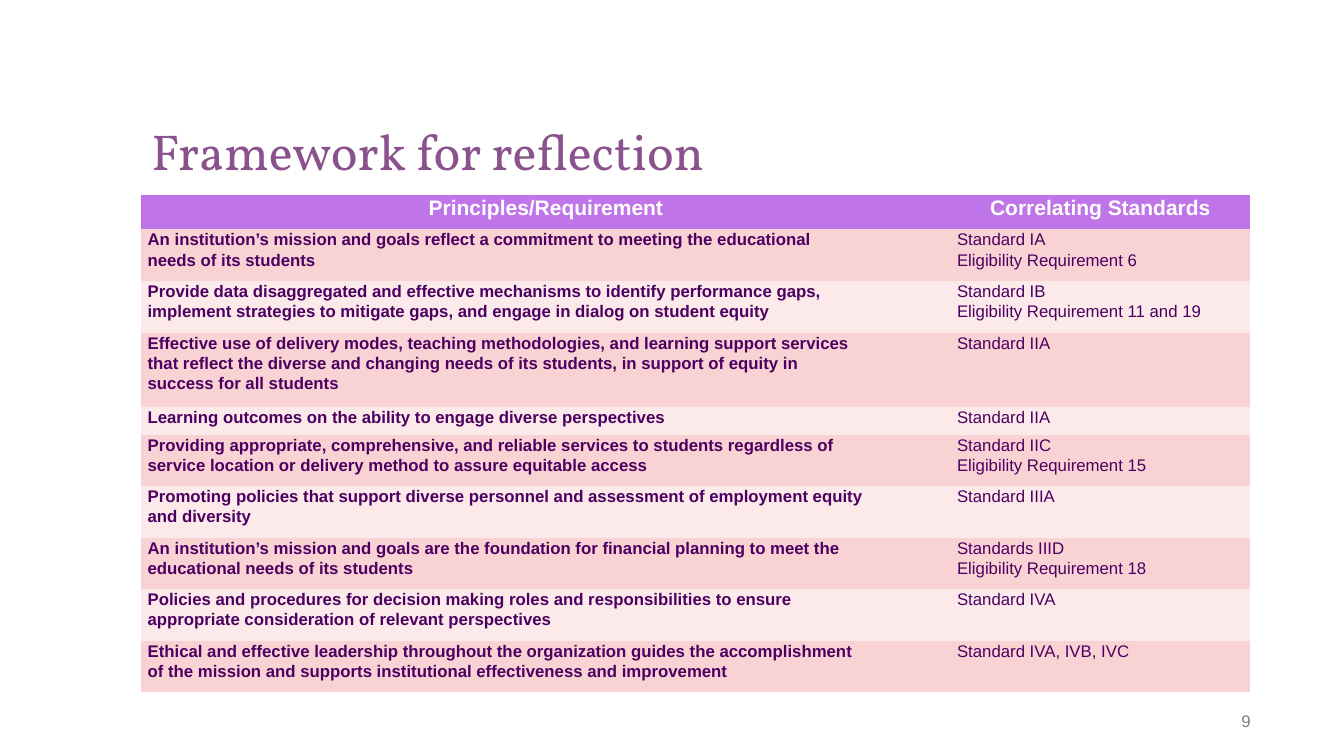
from pptx import Presentation
from pptx import util as u
from pptx.dml import color
from pptx.enum import text

WHITE, PURPLE, PLUM, MAUVE, GREY = "FFFFFF", "BF75E7", "4C0061", "8A528C", "7F7F7F"
BANDS = ["F9D2D4", "FCEAEB"]
LEFT, WIDTHS = 3.56, [20.4, 7.54]
HEADER_HEIGHT = 0.86
HEIGHT_BY_LINES = {1: 0.69, 2: 1.3, 3: 1.88}
NO_STYLE = "{2D5ABB26-0587-4C30-8999-92F81FD0307C}"

HEADINGS = ["Principles/Requirement", "Correlating Standards"]
PRINCIPLES = [
    ("An institution’s mission and goals reflect a commitment to meeting the educational\n"
     "needs of its students",
     "Standard IA\nEligibility Requirement 6"),
    ("Provide data disaggregated and effective mechanisms to identify performance gaps,\n"
     "implement strategies to mitigate gaps, and engage in dialog on student equity",
     "Standard IB\nEligibility Requirement 11 and 19"),
    ("Effective use of delivery modes, teaching methodologies, and learning support services\n"
     "that reflect the diverse and changing needs of its students, in support of equity in\n"
     "success for all students",
     "Standard IIA"),
    ("Learning outcomes on the ability to engage diverse perspectives",
     "Standard IIA"),
    ("Providing appropriate, comprehensive, and reliable services to students regardless of\n"
     "service location or delivery method to assure equitable access",
     "Standard IIC\nEligibility Requirement 15"),
    ("Promoting policies that support diverse personnel and assessment of employment equity\n"
     "and diversity",
     "Standard IIIA"),
    ("An institution’s mission and goals are the foundation for financial planning to meet the\n"
     "educational needs of its students",
     "Standards IIID\nEligibility Requirement 18"),
    ("Policies and procedures for decision making roles and responsibilities to ensure\n"
     "appropriate consideration of relevant perspectives",
     "Standard IVA"),
    ("Ethical and effective leadership throughout the organization guides the accomplishment\n"
     "of the mission and supports institutional effectiveness and improvement",
     "Standard IVA, IVB, IVC"),
]


def rgb(value):
    return color.RGBColor.from_string(value)


def write(frame, words, size, shade, font="Arial", bold=False,
          align=text.PP_ALIGN.LEFT, spacing=1.0):
    """Fill a text frame and format every run alike."""
    frame.text = words
    for para in frame.paragraphs:
        para.alignment = align
        para.line_spacing = spacing
        for span in para.runs:
            span.font.name = font
            span.font.size = u.Pt(size)
            span.font.bold = bold
            span.font.color.rgb = rgb(shade)


def add_title(page, words):
    title = page.shapes.title
    title.left, title.top = u.Cm(LEFT), u.Cm(1.02)
    title.width, title.height = u.Cm(27.91), u.Cm(3.68)
    frame = title.text_frame
    frame.auto_size = text.MSO_AUTO_SIZE.NONE
    frame.vertical_anchor = text.MSO_ANCHOR.BOTTOM
    write(frame, words, 36, MAUVE, font="Vollkorn", spacing=0.9)


def add_page_number(page, number):
    box = page.shapes.add_textbox(u.Cm(28.98), u.Cm(17.65), u.Cm(2.54), u.Cm(1.02))
    frame = box.text_frame
    frame.word_wrap = True
    frame.margin_right = 0
    frame.vertical_anchor = text.MSO_ANCHOR.MIDDLE
    write(frame, number, 12, GREY, align=text.PP_ALIGN.RIGHT)


def fill_cell(cell, words, fill, **style):
    cell.margin_left = cell.margin_right = u.Cm(0.16)
    cell.margin_top = cell.margin_bottom = 0
    cell.fill.solid()
    cell.fill.fore_color.rgb = rgb(fill)
    write(cell.text_frame, words, spacing=1.07, **style)


def add_standards_table(page):
    heights = [HEADER_HEIGHT] + [HEIGHT_BY_LINES[principle.count("\n") + 1]
                                 for principle, _ in PRINCIPLES]
    frame = page.shapes.add_table(len(heights), len(WIDTHS), u.Cm(LEFT), u.Cm(4.92),
                                  u.Cm(sum(WIDTHS)), u.Cm(sum(heights)))
    table = frame.table
    table._tbl.tblPr.find("{*}tableStyleId").text = NO_STYLE
    for column, width in zip(table.columns, WIDTHS):
        column.width = u.Cm(width)
    for row, height in zip(table.rows, heights):
        row.height = u.Cm(height)
    for column, heading in enumerate(HEADINGS):
        fill_cell(table.cell(0, column), heading, PURPLE, size=15, shade=WHITE,
                  bold=True, align=text.PP_ALIGN.CENTER)
    for index, entry in enumerate(PRINCIPLES):
        for column, words in enumerate(entry):
            fill_cell(table.cell(index + 1, column), words, BANDS[index % 2],
                      size=12, shade=PLUM, bold=column == 0)


def main():
    deck = Presentation()
    deck.slide_width, deck.slide_height = u.Cm(33.87), u.Cm(19.05)
    page = deck.slides.add_slide(deck.slide_layouts.get_by_name("Title Only"))
    add_title(page, "Framework for reflection")
    add_standards_table(page)
    add_page_number(page, "9")
    deck.save("out.pptx")


if __name__ == "__main__":
    main()
